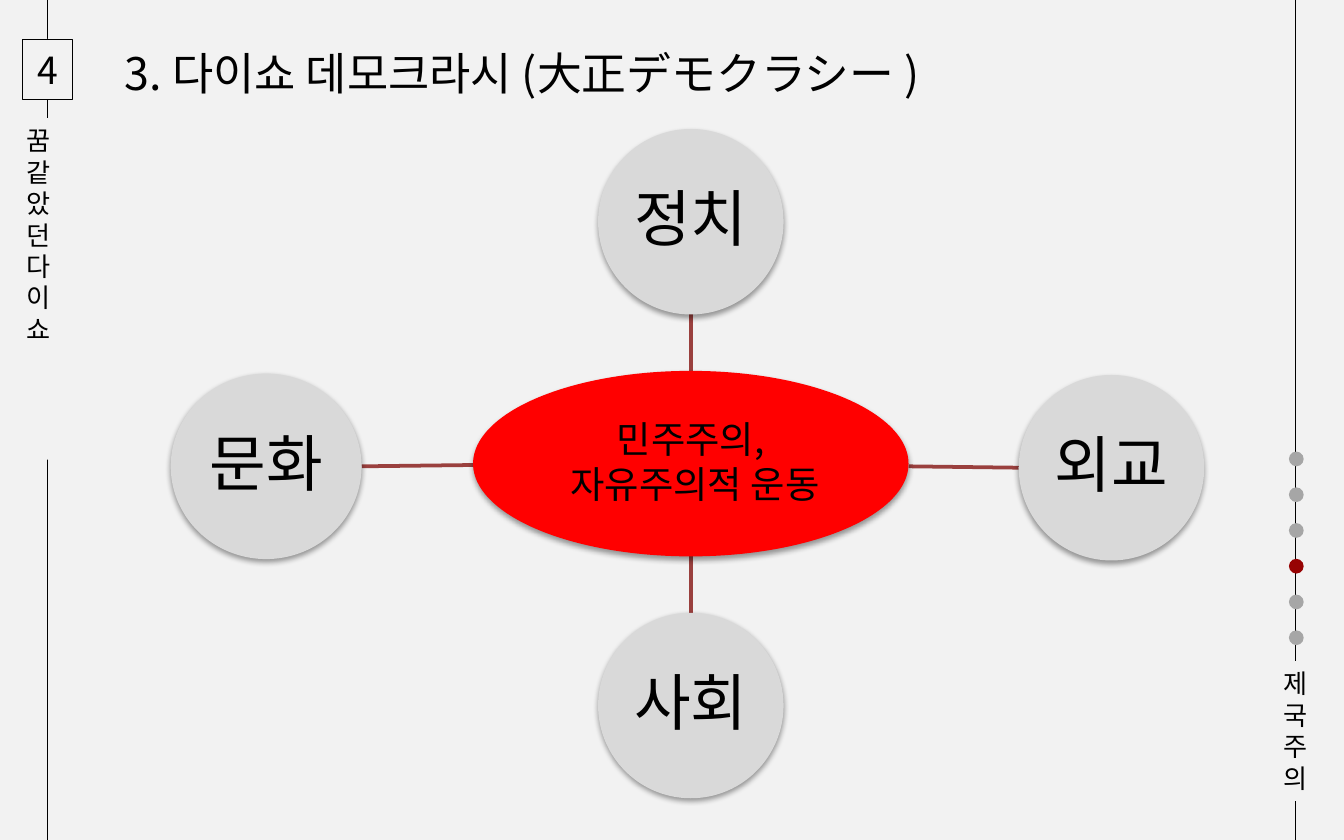
"""Build a slide on Taisho democracy: a central idea linked to four fields."""
from lxml import etree
from pptx import Presentation
from pptx.dml.color import RGBColor
from pptx.enum.shapes import MSO_CONNECTOR, MSO_SHAPE
from pptx.enum.text import MSO_ANCHOR, MSO_AUTO_SIZE, PP_ALIGN
from pptx.oxml.ns import qn
from pptx.util import Inches, Pt

RECTANGLE, OVAL = MSO_SHAPE.RECTANGLE, MSO_SHAPE.OVAL
STRAIGHT = MSO_CONNECTOR.STRAIGHT
MIDDLE, CENTER = MSO_ANCHOR.MIDDLE, PP_ALIGN.CENTER
GROW = MSO_AUTO_SIZE.SHAPE_TO_FIT_TEXT

WIDTH, HEIGHT = 10, 6.25
FONT = "Noto Sans CJK KR"
COLORS = {"paper": "F2F2F2", "ink": "000000", "dot": "A6A6A6", "active": "970303",
          "hub": "FF0000", "field": "D9D9D9", "link": "9A403E"}

RAILS = [0.35, 9.64]
NUMBER_FRAME = (0.17, 0.29, 0.37, 0.45)
LABELS = [
    {"at": (0.18, 0.3, 0.36, 0.44), "lines": ["4"], "size": 20},
    {"at": (9.45, 4.92, 0.4, 1.04), "lines": ["제", "국", "주", "의"], "size": 14,
     "fill": "paper"},
    {"at": (0.1, 0.88, 0.51, 2.54), "lines": ["꿈같았던 다이쇼"], "size": 14,
     "fill": "paper", "vertical": True},
    {"at": (0.83, 0.29, 7.48, 0.5), "lines": ["3. 다이쇼 데모크라시 (大正デモクラシー )"],
     "size": 24, "wrap": True},
]
DOTS = {"count": 6, "active": 3, "left": 9.59, "first": 3.36, "last": 4.69, "size": 0.11}
BUBBLES = [
    {"at": (3.52, 2.76, 3.24, 1.38), "lines": ["민주주의,", " 자유주의적 운동"],
     "size": 20, "fill": "hub", "inset": 0.01},
    {"at": (4.45, 0.96, 1.38, 1.38), "lines": ["정치"]},
    {"at": (7.58, 2.79, 1.38, 1.38), "lines": ["외교"]},
    {"at": (4.45, 4.56, 1.38, 1.38), "lines": ["사회"]},
    {"at": (1.27, 2.78, 1.42, 1.38), "lines": ["문화"]},
]
LINKS = [(5.14, 2.76, 5.14, 2.34), (6.76, 3.47, 7.58, 3.48),
         (5.14, 4.14, 5.14, 4.56), (3.52, 3.46, 2.69, 3.47)]


def color(name):
    return RGBColor.from_string(COLORS[name])


def lengths(values):
    return [Inches(value) for value in values]


def apply(target, values):
    for name, value in values.items():
        setattr(target, name, value)


def add_form(page, kind, at, fill, outline=None):
    form = page.shapes.add_shape(kind, *lengths(at))
    form.shadow.inherit = False
    form.fill.solid()
    form.fill.fore_color.rgb = color(fill)
    if outline:
        form.line.color.rgb = color(outline)
        form.line.width = Pt(0.5)
    else:
        form.line.fill.background()
    return form


def add_line(page, ends, name, width):
    line = page.shapes.add_connector(STRAIGHT, *lengths(ends))
    line.line.color.rgb = color(name)
    line.line.width = Pt(width)
    etree.SubElement(line._element.spPr, qn("a:effectLst"))


def write(frame, lines, size, layout):
    frame.text = "\n".join(lines)
    for para in frame.paragraphs:
        apply(para, layout)
        for span in para.runs:
            apply(span.font, {"size": Pt(size), "name": FONT})
            span.font.color.rgb = color("ink")
            etree.SubElement(span.font._element, qn("a:ea"), typeface=FONT)


def add_label(page, at, lines, size, fill=None, wrap=False, vertical=False):
    box = page.shapes.add_textbox(*lengths(at))
    if fill:
        box.fill.solid()
        box.fill.fore_color.rgb = color(fill)
    frame = box.text_frame
    apply(frame, {"word_wrap": wrap, "auto_size": GROW})
    if vertical:
        frame._element.bodyPr.set("vert", "wordArtVertRtl")
    write(frame, lines, size, {})


def add_shadow(form):
    effects = form._element.spPr.find(qn("a:effectLst"))
    shadow = etree.SubElement(effects, qn("a:outerShdw"), blurRad=str(Pt(3.1)),
                              dist=str(Pt(1.6)), dir="5400000", rotWithShape="0")
    shade = etree.SubElement(shadow, qn("a:srgbClr"), val=COLORS["ink"])
    etree.SubElement(shade, qn("a:alpha"), val="38000")


def add_bubble(page, at, lines, size=33, fill="field", inset=0.02):
    bubble = add_form(page, OVAL, at, fill)
    add_shadow(bubble)
    frame = bubble.text_frame
    apply(frame, {"word_wrap": True, "vertical_anchor": MIDDLE})
    for side in ("left", "right", "top", "bottom"):
        setattr(frame, f"margin_{side}", Inches(inset))
    write(frame, lines, size, {"alignment": CENTER, "line_spacing": 0.9,
                               "space_after": Pt(size * 0.12)})


def add_dots(page, count, active, left, first, last, size):
    step = (last - first) / (count - 1)
    for index in range(count):
        fill = "active" if index == active else "dot"
        add_form(page, OVAL, (left, first + index * step, size, size), fill)


def main():
    deck = Presentation()
    deck.slide_width, deck.slide_height = lengths((WIDTH, HEIGHT))
    page = deck.slides.add_slide(deck.slide_layouts[6])
    add_form(page, RECTANGLE, (0, 0, WIDTH, HEIGHT), "paper")
    for x in RAILS:
        add_line(page, (x, 0, x, HEIGHT), "ink", 0.5)
    add_form(page, RECTANGLE, NUMBER_FRAME, "paper", "ink")
    for label in LABELS:
        add_label(page, **label)
    add_dots(page, **DOTS)
    for ends in LINKS:
        add_line(page, ends, "link", 2)
    for bubble in BUBBLES:
        add_bubble(page, **bubble)
    deck.save("out.pptx")


if __name__ == "__main__":
    main()
